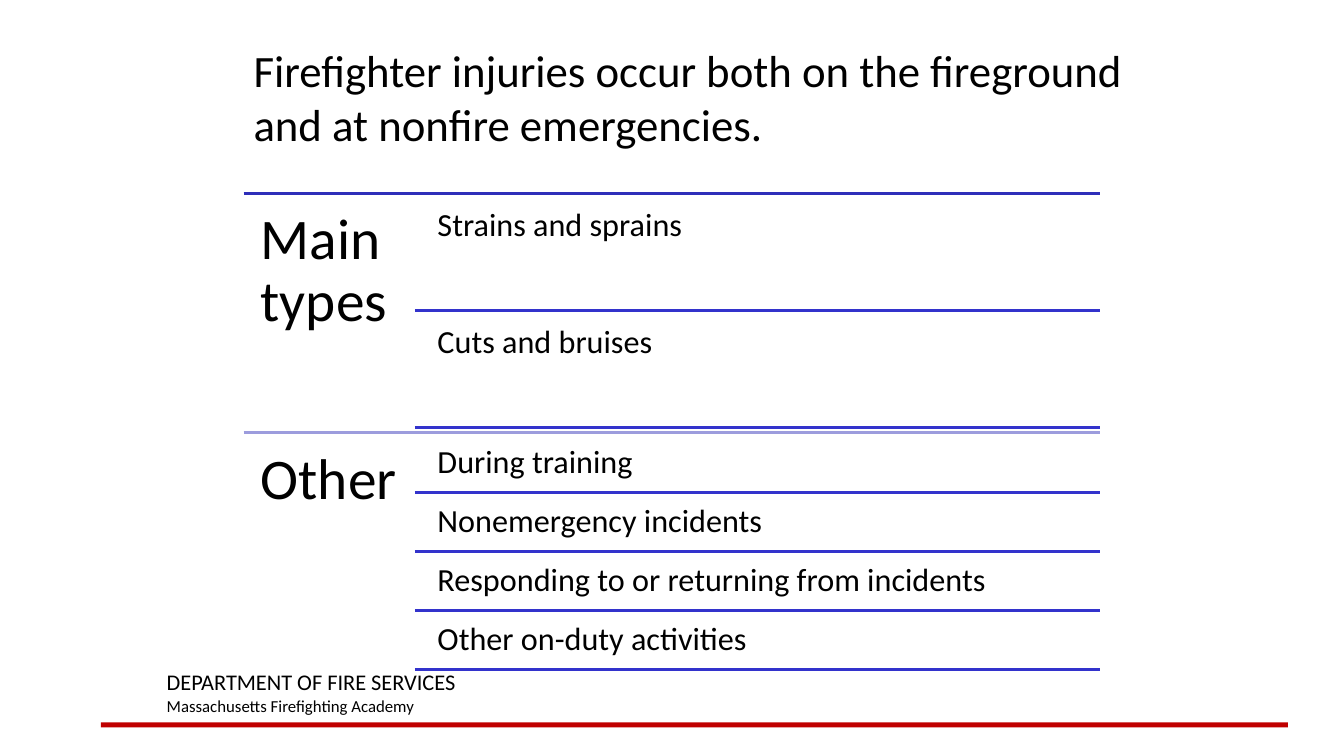
from lxml import etree
from pptx import Presentation
from pptx.dml.color import RGBColor
from pptx.enum import shapes, text
from pptx.oxml import ns
from pptx.util import Pt

BLACK = RGBColor(0x00, 0x00, 0x00)
RED = RGBColor(0xC0, 0x00, 0x00)
ROW_BLUE = RGBColor(0x33, 0x33, 0xCC)
MAIN_BLUE = RGBColor(0x2E, 0x2E, 0xB9)
OTHER_BLUE = RGBColor(0x9C, 0x9C, 0xDD)

SECTIONS = [
    ("Main types", MAIN_BLUE, ["Strains and sprains", "Cuts and bruises"]),
    ("Other", OTHER_BLUE, [
        "During training",
        "Nonemergency incidents",
        "Responding to or returning from incidents",
        "Other on-duty activities",
    ]),
]
GAP_RATIO = 0.05


def add_text(slide, box, lines, sizes, inset=(7.2, 3.6), spacing=1.0,
             anchor=text.MSO_ANCHOR.TOP):
    shape = slide.shapes.add_textbox(*map(Pt, box))
    frame = shape.text_frame
    frame.word_wrap = True
    frame.vertical_anchor = anchor
    frame.margin_left = frame.margin_right = Pt(inset[0])
    frame.margin_top = frame.margin_bottom = Pt(inset[1])
    for index, (line, size) in enumerate(zip(lines, sizes)):
        paragraph = frame.add_paragraph() if index else frame.paragraphs[0]
        paragraph.line_spacing = spacing
        run = paragraph.add_run()
        run.text = line
        run.font.name = "Calibri"
        run.font.size = Pt(size)
        run.font.color.rgb = BLACK


def add_rule(slide, left, right, y, color):
    connector = slide.shapes.add_connector(
        shapes.MSO_CONNECTOR.STRAIGHT, Pt(left), Pt(y), Pt(right), Pt(y))
    connector.line.color.rgb = color
    connector.line.width = Pt(2)
    etree.SubElement(connector._element.spPr, ns.qn("a:effectLst"))


def add_section(slide, box, heading, color, items):
    left, top, width, height = box
    right = left + width
    heading_width = width / 5
    rows_left = left + heading_width
    text_left = rows_left + 9.2
    row_height = height / (len(items) * (1 + GAP_RATIO) + GAP_RATIO)
    gap = row_height * GAP_RATIO

    add_rule(slide, left, right, top, color)
    add_text(slide, (left, top, heading_width, height), [heading], [41],
             inset=(12.3, 12.3), spacing=0.9)
    for index, item in enumerate(items):
        row_top = top + gap + index * (row_height + gap)
        add_text(slide, (text_left, row_top, right - text_left, row_height),
                 [item], [23], inset=(6.9, 6.9), spacing=0.9)
        add_rule(slide, rows_left, right, row_top + row_height, ROW_BLUE)


def add_outline(slide, box):
    left, top, width, height = box
    section_height = height / len(SECTIONS)
    for index, section in enumerate(SECTIONS):
        section_top = top + index * section_height
        add_section(slide, (left, section_top, width, section_height), *section)


def add_title(slide, box):
    add_text(slide, box,
             ["Firefighter injuries occur both on the fireground and at nonfire emergencies."],
             [32], anchor=text.MSO_ANCHOR.MIDDLE)


def add_footer(slide, box):
    left, top, width, height = box
    bar = slide.shapes.add_shape(
        shapes.MSO_SHAPE.RECTANGLE,
        Pt(left), Pt(top + height - 3.6), Pt(width), Pt(3.6))
    bar.shadow.inherit = False
    bar.fill.solid()
    bar.fill.fore_color.rgb = RED
    bar.line.fill.background()
    add_text(slide, (left + 40, top, 408, 41),
             ["DEPARTMENT OF FIRE SERVICES", "Massachusetts Firefighting Academy"],
             [16, 12])


def main():
    presentation = Presentation()
    presentation.slide_width = Pt(960)
    presentation.slide_height = Pt(540)
    slide = presentation.slides.add_slide(presentation.slide_layouts[6])
    add_footer(slide, (72, 474, 848, 45.6))
    add_outline(slide, (174, 138, 612, 342.4))
    add_title(slide, (174, 24, 660, 90))
    presentation.save("out.pptx")


if __name__ == "__main__":
    main()
